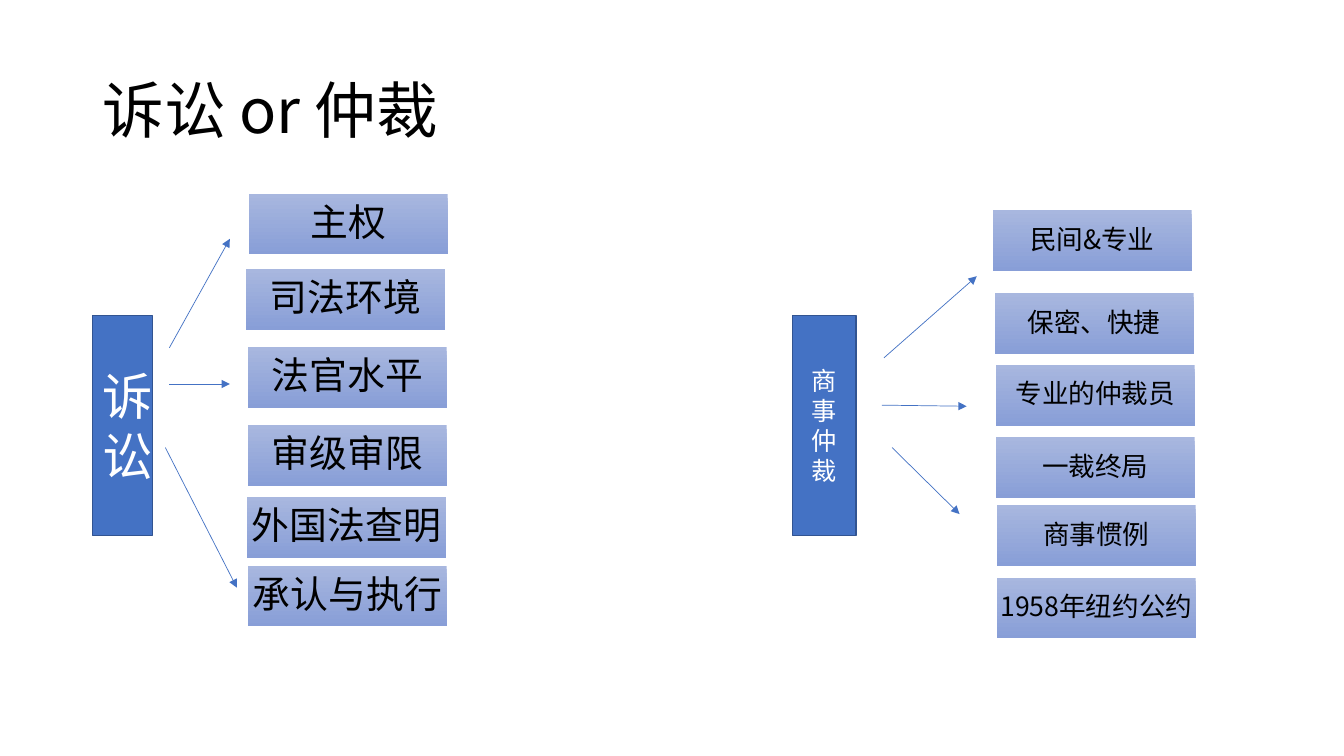
"""Build a slide that sets litigation beside commercial arbitration."""
from lxml import etree
from pptx import Presentation
from pptx import util as u
from pptx.dml import color
from pptx.enum import shapes, text
from pptx.oxml import ns

FONT = "Noto Sans CJK SC"
COLORS = {
    "black": "000000",
    "white": "FFFFFF",
    "blue": "4472C4",
    "bar_edge": "325491",
    "card_top": "A8B7DF",
    "card_bottom": "889ED7",
}
CARD_WIDTH, CARD_HEIGHT = 142, 43.4
BAR_TOP, BAR_HEIGHT = 225.4, 157

LITIGATION = {
    "bar": ("诉讼", 66, 42.8, 36),
    "card_size": 27,
    "card_inset": 1.4,
    "cards": [
        ("主权", 177.8, 138.4),
        ("司法环境", 175.8, 192.2),
        ("法官水平", 177.1, 247.8),
        ("审级审限", 177.1, 303.8),
        ("外国法查明", 176.5, 355),
        ("承认与执行", 177.1, 404),
    ],
    "arrows": [
        (121, 248.4, 164.2, 170.6),
        (118.1, 319.7, 169.2, 419.8),
        (121, 274.3, 164.2, 274.3),
    ],
}
ARBITRATION = {
    "bar": ("商事仲裁", 566, 45.4, 18),
    "card_size": 19,
    "card_inset": 0.9,
    "cards": [
        ("民间&专业", 709.2, 150.2),
        ("保密、快捷", 710.6, 209.5),
        ("专业的仲裁员", 711.4, 260.6),
        ("一裁终局", 711.4, 312.5),
        ("商事惯例", 712.1, 360.7),
        ("1958年纽约公约", 712.1, 412.6),
    ],
    "arrows": [
        (631.4, 255.6, 697.7, 197.3),
        (630, 289.4, 690.5, 290.2),
        (637.2, 319.7, 685.4, 367.2),
    ],
}


def rgb(name):
    """Return the named colour."""
    return color.RGBColor.from_string(COLORS[name])


def write(shape, words, size, color_name, align, spacing=1.0):
    """Put one formatted run into a vertically centred shape."""
    frame = shape.text_frame
    frame.word_wrap = True
    frame.auto_size = text.MSO_AUTO_SIZE.NONE
    frame.vertical_anchor = text.MSO_ANCHOR.MIDDLE
    paragraph = frame.paragraphs[0]
    paragraph.alignment = align
    paragraph.line_spacing = spacing
    run = paragraph.add_run()
    run.text = words
    run.font.size = u.Pt(size)
    run.font.name = FONT
    run.font.color.rgb = rgb(color_name)
    east_asian = etree.SubElement(run.font._element, ns.qn("a:ea"))
    east_asian.set("typeface", FONT)


def add_rectangle(slide, left, top, width, height):
    """Add a rectangle without shadow."""
    shape = slide.shapes.add_shape(
        shapes.MSO_SHAPE.RECTANGLE, u.Pt(left), u.Pt(top), u.Pt(width), u.Pt(height)
    )
    shape.shadow.inherit = False
    return shape


def add_card(slide, words, left, top, size, inset):
    """Add a gradient card with centred text."""
    card = add_rectangle(slide, left, top, CARD_WIDTH, CARD_HEIGHT)
    card.line.fill.background()
    card.fill.gradient()
    card.fill.gradient_angle = 270
    for stop, name in zip(card.fill.gradient_stops, ("card_top", "card_bottom")):
        stop.color.rgb = rgb(name)
    frame = card.text_frame
    frame.margin_left = frame.margin_right = u.Pt(inset)
    frame.margin_top = frame.margin_bottom = u.Pt(inset)
    write(card, words, size, "black", text.PP_ALIGN.CENTER, 0.9)


def add_bar(slide, words, left, width, size):
    """Add the tall bar that names one side."""
    bar = add_rectangle(slide, left, BAR_TOP, width, BAR_HEIGHT)
    bar.fill.solid()
    bar.fill.fore_color.rgb = rgb("blue")
    bar.line.color.rgb = rgb("bar_edge")
    bar.line.width = u.Pt(1)
    write(bar, words, size, "white", text.PP_ALIGN.CENTER)


def add_arrow(slide, *ends):
    """Add a thin arrow from the first point to the second."""
    arrow = slide.shapes.add_connector(
        shapes.MSO_CONNECTOR.STRAIGHT, *[u.Pt(value) for value in ends]
    )
    arrow.line.color.rgb = rgb("blue")
    arrow.line.width = u.Pt(0.5)
    tail = etree.SubElement(arrow.line._get_or_add_ln(), ns.qn("a:tailEnd"))
    tail.set("type", "triangle")
    etree.SubElement(arrow._element.spPr, ns.qn("a:effectLst"))


def add_side(slide, side):
    """Add the cards, bar and arrows of one side."""
    for words, left, top in side["cards"]:
        add_card(slide, words, left, top, side["card_size"], side["card_inset"])
    add_bar(slide, *side["bar"])
    for ends in side["arrows"]:
        add_arrow(slide, *ends)


def add_title(slide, words):
    """Place and fill the title placeholder."""
    title = slide.shapes.title
    title.left, title.top = u.Pt(66), u.Pt(28.8)
    title.width, title.height = u.Pt(828), u.Pt(104.4)
    write(title, words, 44, "black", text.PP_ALIGN.LEFT, 0.9)


def main():
    """Build and save the presentation."""
    presentation = Presentation()
    presentation.slide_width = u.Pt(960)
    presentation.slide_height = u.Pt(540)
    slide = presentation.slides.add_slide(presentation.slide_layouts[5])
    add_title(slide, "诉讼 or 仲裁")
    for side in (LITIGATION, ARBITRATION):
        add_side(slide, side)
    presentation.save("out.pptx")


if __name__ == "__main__":
    main()
